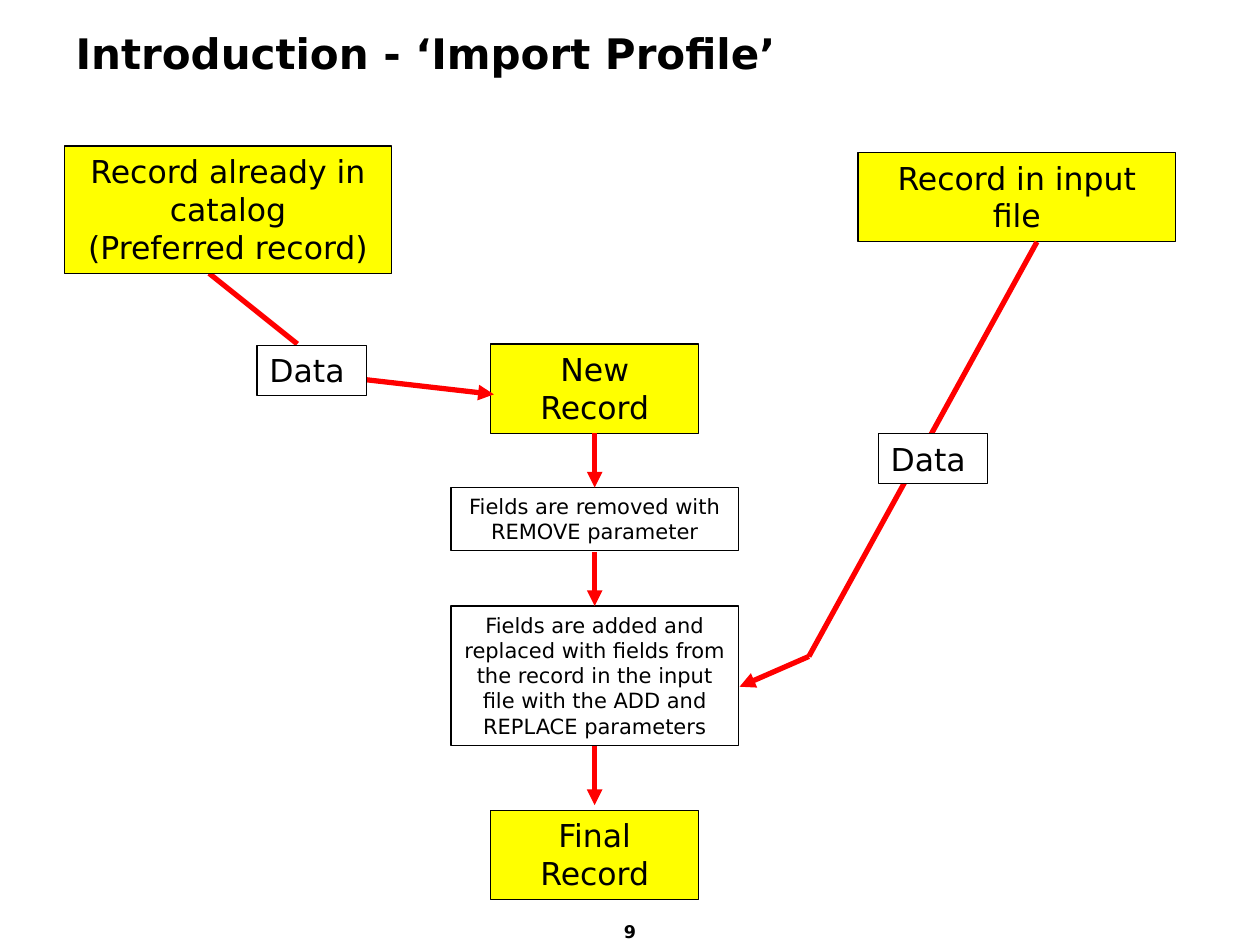
from lxml.etree import SubElement
from pptx import Presentation
from pptx.dml.color import RGBColor
from pptx.enum.shapes import MSO_CONNECTOR as Link, MSO_SHAPE as Shape
from pptx.enum.text import MSO_ANCHOR as Anchor, PP_ALIGN as Align
from pptx.oxml.ns import qn
from pptx.util import Inches, Pt

FONT = "DejaVu Sans"
BLACK, WHITE, YELLOW, RED = "000000", "FFFFFF", "FFFF00", "FF0000"


def color(hex_code):
    """Turn a hex string into a colour."""
    return RGBColor.from_string(hex_code)


def write(frame, text, size=18, bold=False, align=Align.CENTER, anchor=Anchor.TOP):
    """Fill a text frame, one paragraph for each line of text."""
    frame.word_wrap = True
    frame.vertical_anchor = anchor
    frame.text = text
    for paragraph in frame.paragraphs:
        paragraph.alignment = align
        font = paragraph.font
        font.name, font.size, font.bold = FONT, Pt(size), bold
        font.color.rgb = color(BLACK)


def add_box(slide, box, text, fill=YELLOW, **text_format):
    """Add an outlined rectangle with text."""
    rect = slide.shapes.add_shape(Shape.RECTANGLE, *map(Inches, box))
    rect.shadow.inherit = False
    rect.fill.solid()
    rect.fill.fore_color.rgb = color(fill)
    rect.line.color.rgb = color(BLACK)
    rect.line.width = Pt(0.75)
    write(rect.text_frame, text, **text_format)


def add_link(slide, start, end, arrow=True):
    """Add a red line, with an arrowhead at its end if wanted."""
    link = slide.shapes.add_connector(Link.STRAIGHT, *map(Inches, (*start, *end)))
    link.line.color.rgb = color(RED)
    link.line.width = Pt(3)
    if arrow:
        SubElement(link.line._get_or_add_ln(), qn("a:tailEnd"), type="triangle")
    SubElement(link._element.spPr, qn("a:effectLst"))


def add_title(slide, box, text):
    """Place and format the slide title."""
    title = slide.shapes.title
    title.left, title.top, title.width, title.height = map(Inches, box)
    write(title.text_frame, text, size=24, bold=True, align=Align.LEFT, anchor=Anchor.MIDDLE)


def add_page_number(slide, box, number):
    """Add the page number at the foot of the slide."""
    footer = slide.shapes.add_textbox(*map(Inches, box))
    write(footer.text_frame, number, size=10, bold=True, anchor=Anchor.BOTTOM)


def add_existing_record(slide, box):
    """Add the existing record and its data flow to the new record."""
    left, top, width, height = box
    add_link(slide, (left + 1.15, top + height), (left + 1.85, top + 1.57), arrow=False)
    add_link(slide, (left + 1.84, top + 1.79), (left + 3.41, top + 1.97))
    add_box(slide, box, "Record already in catalog\n(Preferred record)")
    add_box(slide, (left + 1.53, top + 1.58, 0.87, 0.4), "Data", fill=WHITE, align=Align.LEFT)


def add_input_record(slide, box):
    """Add the input record and its data flow to the replaced fields."""
    left, top, width, height = box
    bend = (left - 0.39, top + 4)
    add_box(slide, box, "Record in input file")
    add_link(slide, (left + 1.42, top + height), bend, arrow=False)
    add_link(slide, bend, (left - 0.94, top + 4.24))
    add_box(slide, (left + 0.16, top + 2.23, 0.87, 0.4), "Data", fill=WHITE, align=Align.LEFT)


def add_merge_steps(slide, box):
    """Add the column of steps from the new to the final record."""
    left, top, width, height = box
    center = left + width / 2
    record = {"fill": YELLOW, "size": 18}
    step = {"fill": WHITE, "size": 12}
    steps = [
        (0, 1.65, 0.71, "New Record", record),
        (1.14, width, 0.5, "Fields are removed with REMOVE parameter", step),
        (2.08, width, 1.11, "Fields are added and replaced with fields from the record "
         "in the input file with the ADD and REPLACE parameters", step),
        (height - 0.71, 1.65, 0.71, "Final Record", record),
    ]
    for offset, step_width, step_height, text, style in steps:
        add_box(slide, (center - step_width / 2, top + offset, step_width, step_height),
                text, **style)
    for start, end in ((0.71, 1.14), (1.65, 2.08), (3.19, 3.66)):
        add_link(slide, (center, top + start), (center, top + end))


def main():
    """Build the slide and save it."""
    deck = Presentation()
    deck.slide_width, deck.slide_height = Inches(10), Inches(7.5)
    slide = deck.slides.add_slide(deck.slide_layouts[5])
    add_title(slide, (0.5, 0.13, 9, 0.58), "Introduction - ‘Import Profile’")
    add_merge_steps(slide, (3.58, 2.73, 2.28, 4.41))
    add_input_record(slide, (6.81, 1.21, 2.52, 0.71))
    add_existing_record(slide, (0.51, 1.16, 2.6, 1.01))
    add_page_number(slide, (4.68, 7.03, 0.64, 0.5), "9")
    deck.save("out.pptx")


if __name__ == "__main__":
    main()
